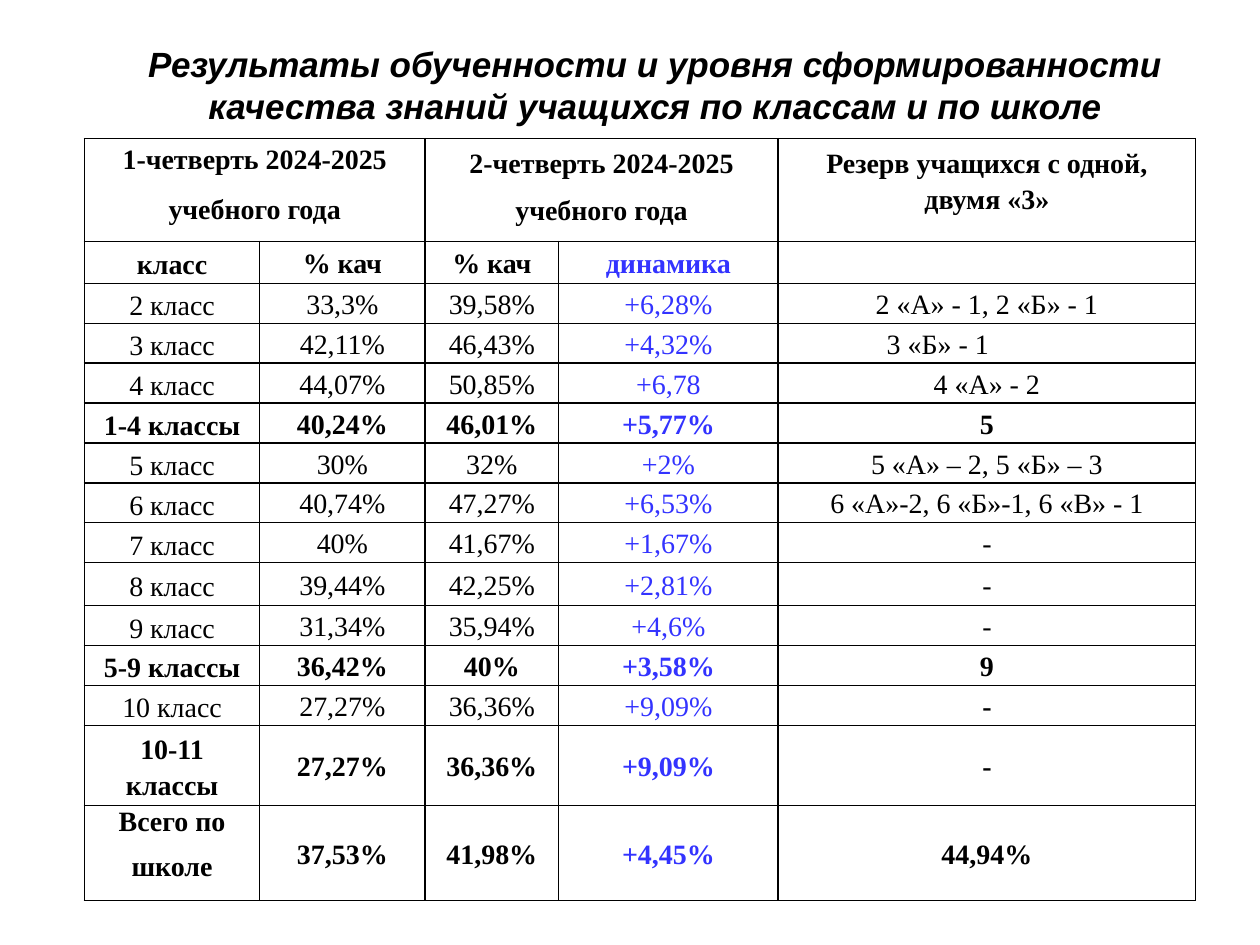
from lxml.etree import SubElement
from pptx import Presentation
from pptx.dml.color import RGBColor
from pptx.enum.text import MSO_ANCHOR, MSO_AUTO_SIZE, PP_ALIGN
from pptx.oxml.ns import qn
from pptx.util import Inches, Pt

BLACK = RGBColor(0x00, 0x00, 0x00)
BLUE = RGBColor(0x33, 0x33, 0xFF)

TITLE = "Результаты обученности и уровня сформированности качества знаний учащихся по классам и по школе"
COLUMN_WEIGHTS = [1.39, 1.31, 1.06, 1.74, 3.31]
ROW_WEIGHTS = [0.81, 0.33] + [0.31] * 7 + [0.34] + [0.31] * 3 + [0.63, 0.75]
DYNAMICS, RESERVE = 3, 4
HEADINGS = [
    ["1-четверть 2024-2025\nучебного года", "", "2-четверть 2024-2025\nучебного года", "",
     "Резерв учащихся с одной, двумя «3»"],
    ["класс", "% кач", "% кач", "динамика", ""],
]
RESULTS = [
    ["2 класс", "33,3%", "39,58%", "+6,28%", "2 «А» - 1, 2 «Б» - 1"],
    ["3 класс", "42,11%", "46,43%", "+4,32%", "3 «Б» - 1"],
    ["4 класс", "44,07%", "50,85%", "+6,78", "4 «А» - 2"],
    ["1-4 классы", "40,24%", "46,01%", "+5,77%", "5"],
    ["5 класс", "30%", "32%", "+2%", "5 «А» – 2, 5 «Б» – 3"],
    ["6 класс", "40,74%", "47,27%", "+6,53%", "6 «А»-2, 6 «Б»-1, 6 «В» - 1"],
    ["7 класс", "40%", "41,67%", "+1,67%", "-"],
    ["8 класс", "39,44%", "42,25%", "+2,81%", "-"],
    ["9 класс", "31,34%", "35,94%", "+4,6%", "-"],
    ["5-9 классы", "36,42%", "40%", "+3,58%", "9"],
    ["10 класс", "27,27%", "36,36%", "+9,09%", "-"],
    ["10-11 классы", "27,27%", "36,36%", "+9,09%", "-"],
    ["Всего по\nшколе", "37,53%", "41,98%", "+4,45%", "44,94%"],
]
ROWS = HEADINGS + RESULTS
TOTAL_LABELS = {"1-4 классы", "5-9 классы", "10-11 классы", "Всего по\nшколе"}
TENTH_GRADE_ROW = 12
THIRD_GRADE_ROW = 3


class ResultsSlide:
    title_font, table_font = "Arial", "Times New Roman"
    title_size, table_size = Pt(20), Pt(16)

    def __init__(self, deck):
        self.deck = deck
        self.slide = deck.slides.add_slide(deck.slide_layouts[5])

    def area(self, left, top, width, height):
        """Turn shares of the slide's size into lengths."""
        across, down = self.deck.slide_width, self.deck.slide_height
        return int(left * across), int(top * down), int(width * across), int(height * down)

    def style_run(self, span, name, size, color=BLACK, bold=True, italic=False):
        font = span.font
        font.name, font.size, font.bold, font.italic = name, size, bold, italic
        font.color.rgb = color

    def title(self, text, *shares):
        box = self.slide.shapes.title
        box.left, box.top, box.width, box.height = self.area(*shares)
        frame = box.text_frame
        frame.text = text
        frame.word_wrap = True
        frame.auto_size = MSO_AUTO_SIZE.SHAPE_TO_FIT_TEXT
        frame.vertical_anchor = MSO_ANCHOR.TOP
        para = frame.paragraphs[0]
        para.alignment = PP_ALIGN.CENTER
        self.style_run(para.runs[0], self.title_font, self.title_size, italic=True)

    def table(self, rows, column_weights, row_weights, *shares):
        left, top, width, height = self.area(*shares)
        table = self.slide.shapes.add_table(
            len(rows), len(column_weights), left, top, width, height).table
        table.first_row = table.horz_banding = False
        for column, weight in zip(table.columns, column_weights):
            column.width = int(width * weight / sum(column_weights))
        for row, weight in zip(table.rows, row_weights):
            row.height = int(height * weight / sum(row_weights))
        for row, values in enumerate(rows):
            for column, text in enumerate(values):
                self.cell(table.cell(row, column), text, row, column, values[0])
        for start in (0, 2):
            table.cell(0, start).merge(table.cell(0, start + 1))
        return table

    def cell(self, cell, text, row, column, label):
        self.borders(cell)
        cell.fill.background()
        top_heading = row == 0
        roomy = top_heading and column > 0
        side = 0.08 if roomy else 0.06 if column == 0 or row < 3 else 0.01
        cell.margin_left = cell.margin_right = Inches(side)
        cell.margin_top = Inches(0.04 if roomy else 0.01)
        cell.margin_bottom = Inches(0.04 if roomy else 0)
        top_aligned = top_heading or "\n" in text
        cell.vertical_anchor = MSO_ANCHOR.TOP if top_aligned else MSO_ANCHOR.MIDDLE
        bold = (row < len(HEADINGS) or label in TOTAL_LABELS
                or (row, column) == (TENTH_GRADE_ROW, RESERVE))
        cell.text_frame.text = text
        for index, para in enumerate(cell.text_frame.paragraphs):
            para.alignment = PP_ALIGN.CENTER
            if column == 0 and "\n" in text and not top_heading:
                para.line_spacing = 1.0
            elif column == 0 or (top_heading and not (column == 2 and index)):
                para.line_spacing = 1.15
            else:
                para.line_spacing = 1.07
            compact = row >= len(HEADINGS) and column in (2, DYNAMICS)
            para.space_after = Pt(0 if compact else 8)
            for span in para.runs:
                self.style_run(span, self.table_font, self.table_size,
                               BLUE if column == DYNAMICS else BLACK, bold)

    def borders(self, cell):
        properties = cell._tc.get_or_add_tcPr()
        for side in ("a:lnL", "a:lnR", "a:lnT", "a:lnB"):
            line = SubElement(properties, qn(side), w=str(Pt(1)))
            fill = SubElement(line, qn("a:solidFill"))
            SubElement(fill, qn("a:srgbClr"), val=str(BLACK))


def main():
    deck = Presentation()
    deck.slide_width, deck.slide_height = Inches(10), Inches(7.5)
    results = ResultsSlide(deck)
    results.title(TITLE, 0.067, 0.29 / 7.5, 0.906, 0.77 / 7.5)
    table = results.table(ROWS, COLUMN_WEIGHTS, ROW_WEIGHTS,
                          0.067, 1.1 / 7.5, 0.882, 6.01 / 7.5)
    table.cell(THIRD_GRADE_ROW, RESERVE).margin_right = Inches(0.79)
    deck.save("out.pptx")


if __name__ == "__main__":
    main()
